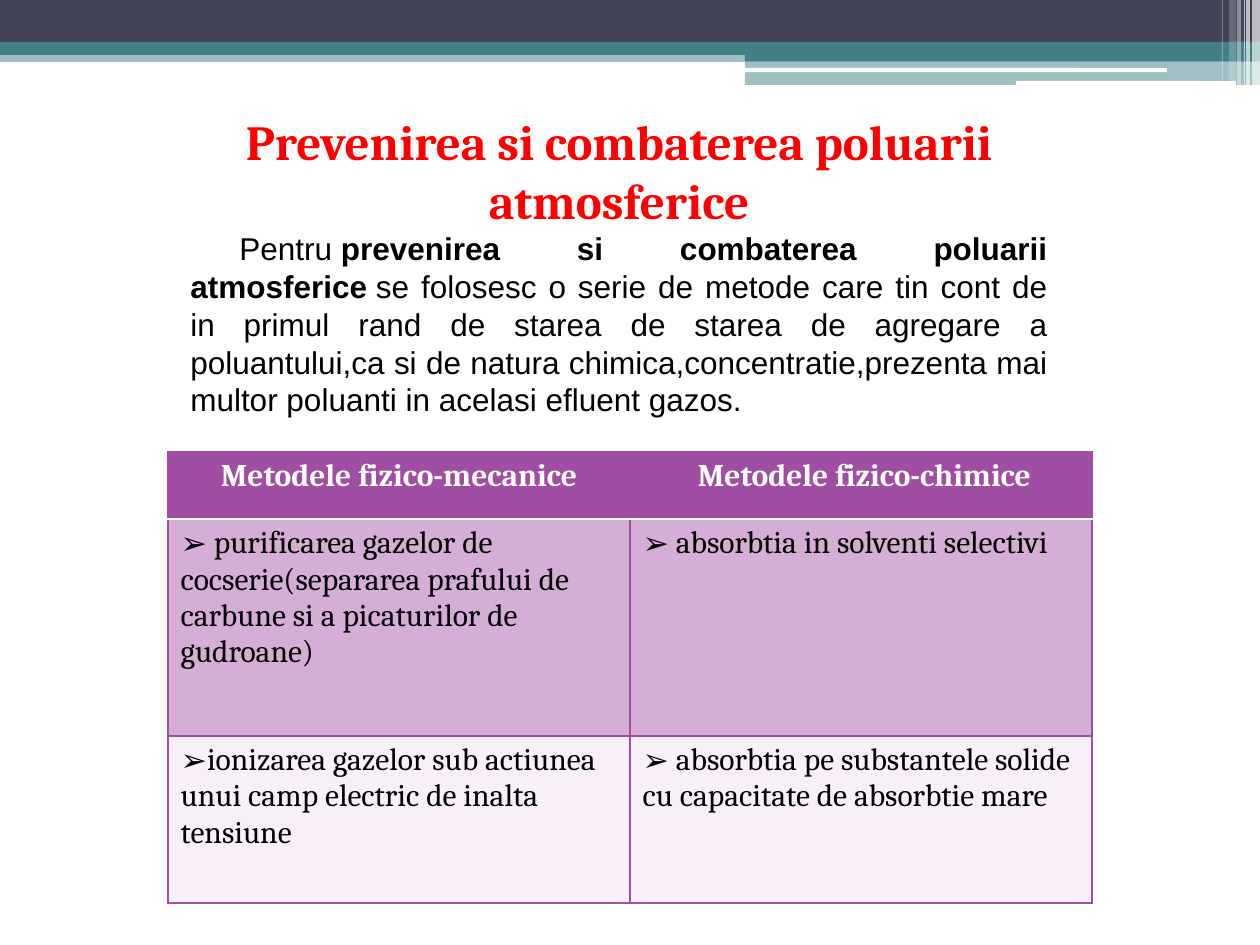
from dataclasses import dataclass

from lxml.etree import SubElement
from pptx import Presentation
from pptx.dml.color import RGBColor
from pptx.enum.shapes import MSO_SHAPE as Preset
from pptx.enum.text import MSO_ANCHOR as Anchor, MSO_AUTO_SIZE as AutoSize, PP_ALIGN as Align
from pptx.oxml.ns import qn
from pptx.util import Pt

EMU_PER_PX = 914400 / 126
NBSP = chr(160)  # no-break space, keeps neighbouring words on one line


def px(length):
    return round(length * EMU_PER_PX)


@dataclass(frozen=True)
class Theme:
    navy: str = "424456"
    teal: str = "438086"
    white: str = "FFFFFF"
    black: str = "000000"
    red: str = "FF0000"
    purple: str = "A04DA3"
    lilac: str = "D5AED6"
    pale: str = "F8EFF8"
    serif: str = "Cambria"
    sans: str = "Arial"
    title_size: int = 28
    text_size: int = 18


class SlideBuilder:
    def __init__(self, slide, theme):
        self.slide = slide
        self.theme = theme

    def add_run(self, paragraph, text, font, size, color, bold=False):
        run = paragraph.add_run()
        run.text = text
        run.font.name = font
        run.font.size = Pt(size)
        run.font.bold = bold
        run.font.color.rgb = RGBColor.from_string(color)

    def band(self, left, top, width, height, color, opacity=100, preset=Preset.RECTANGLE):
        band = self.slide.shapes.add_shape(preset, px(left), px(top), px(width), px(height))
        band.shadow.inherit = False
        band.line.fill.background()
        band.fill.solid()
        band.fill.fore_color.rgb = RGBColor.from_string(color)
        if opacity < 100:
            tint = band.fill._xPr.find(qn("a:solidFill"))[0]
            SubElement(tint, qn("a:alpha"), val=str(opacity * 1000))

    def title(self, left, top, width, height, text):
        heading = self.slide.shapes.title
        heading.left, heading.top = px(left), px(top)
        heading.width, heading.height = px(width), px(height)
        frame = heading.text_frame
        frame.word_wrap = True
        frame.auto_size = AutoSize.NONE
        frame.vertical_anchor = Anchor.TOP
        paragraph = frame.paragraphs[0]
        paragraph.alignment = Align.CENTER
        self.add_run(paragraph, text, self.theme.serif, self.theme.title_size, self.theme.red, True)

    def justified_text(self, left, top, width, height, indent, runs):
        box = self.slide.shapes.add_textbox(px(left), px(top), px(width), px(height))
        box.text_frame.word_wrap = True
        paragraph = box.text_frame.paragraphs[0]
        paragraph.alignment = Align.JUSTIFY
        paragraph._p.get_or_add_pPr().set("indent", str(px(indent)))
        for text, bold in runs:
            self.add_run(paragraph, text, self.theme.sans, self.theme.text_size,
                         self.theme.black, bold)

    def cell_borders(self, cell, **sides):
        properties = cell._tc.get_or_add_tcPr()
        for index, side in enumerate("LRTB"):
            color, points = sides.get(side, (self.theme.purple, 0.75))
            line = SubElement(properties, qn(f"a:ln{side}"), w=str(Pt(points)))
            fill = SubElement(line, qn("a:solidFill"))
            SubElement(fill, qn("a:srgbClr"), val=color)
            properties.remove(line)
            properties.insert(index, line)

    def methods_table(self, left, top, col_width, row_heights, rows):
        theme = self.theme
        columns = len(rows[0])
        table = self.slide.shapes.add_table(
            len(rows), columns, px(left), px(top),
            px(col_width * columns), px(sum(row_heights))).table
        for column in table.columns:
            column.width = px(col_width)
        divider = (theme.white, 1.5)
        row_fills = (theme.purple, theme.lilac, theme.pale)
        for r, (texts, height, fill) in enumerate(zip(rows, row_heights, row_fills)):
            table.rows[r].height = px(height)
            header = r == 0
            edges = {0: {"B": divider}, 1: {"T": divider}}.get(r, {})
            for c, text in enumerate(texts):
                cell = table.cell(r, c)
                cell.fill.solid()
                cell.fill.fore_color.rgb = RGBColor.from_string(fill)
                self.cell_borders(cell, **edges)
                paragraph = cell.text_frame.paragraphs[0]
                if header:
                    paragraph.alignment = Align.CENTER
                else:
                    self.bullet(paragraph)
                self.add_run(paragraph, text, theme.serif, theme.text_size,
                             theme.white if header else theme.black, header)

    def bullet(self, paragraph):
        properties = paragraph._p.get_or_add_pPr()
        properties.set("marL", "0")
        properties.set("indent", "0")
        SubElement(properties, qn("a:buFont"), typeface=self.theme.sans)
        SubElement(properties, qn("a:buChar"), char="➢")


def main():
    theme = Theme()
    deck = Presentation()
    deck.slide_width, deck.slide_height = px(1260), px(945)
    page = SlideBuilder(deck.slides.add_slide(deck.slide_layouts[5]), theme)

    # Header bands
    page.band(0, 50, 1260, 12, theme.teal, 50)
    page.band(0, 0, 1260, 43, theme.navy)
    page.band(0, 42, 1260, 13, theme.teal)
    page.band(745, 49, 515, 12, theme.teal)
    page.band(745, 61, 515, 24, theme.teal, 50)
    for left, top, width, height in ((745, 68, 422, 4), (1016, 81, 220, 5)):
        page.band(left, top, width, height, theme.white, preset=Preset.ROUNDED_RECTANGLE)

    # Light stripes at the right edge
    for left, width, height, opacity in (
            (1252, 8, 86, 65), (1246, 4, 86, 65), (1244, 1, 86, 60),
            (1237, 4, 86, 40), (1229, 7, 81, 20), (1222, 1, 81, 30)):
        page.band(left, 0, width, height, theme.white, opacity)

    # Title and introduction
    page.title(178, 105, 882, 124, "Prevenirea si combaterea poluarii atmosferice")
    page.justified_text(178, 223, 882, 204, 49, (
        (f"Pentru{NBSP}", False),
        ("prevenirea si combaterea poluarii atmosferice", True),
        (f"{NBSP}se folosesc o serie de metode care tin cont de in primul rand de starea de "
         "starea de agregare a poluantului,ca si de natura chimica,concentratie,prezenta "
         "mai multor poluanti in acelasi efluent gazos.", False),
    ))

    # Table of methods
    page.methods_table(168, 452, 462, (67, 217, 167), (
        ("Metodele fizico-mecanice", f"{NBSP}Metodele fizico-chimice"),
        (f"{NBSP}purificarea gazelor de cocserie(separarea prafului de carbune si a "
         "picaturilor de gudroane)", f"{NBSP}absorbtia in solventi selectivi"),
        ("ionizarea gazelor sub actiunea unui camp electric de inalta tensiune",
         f"{NBSP}absorbtia pe substantele solide cu capacitate de absorbtie mare"),
    ))

    deck.save("out.pptx")


if __name__ == "__main__":
    main()
